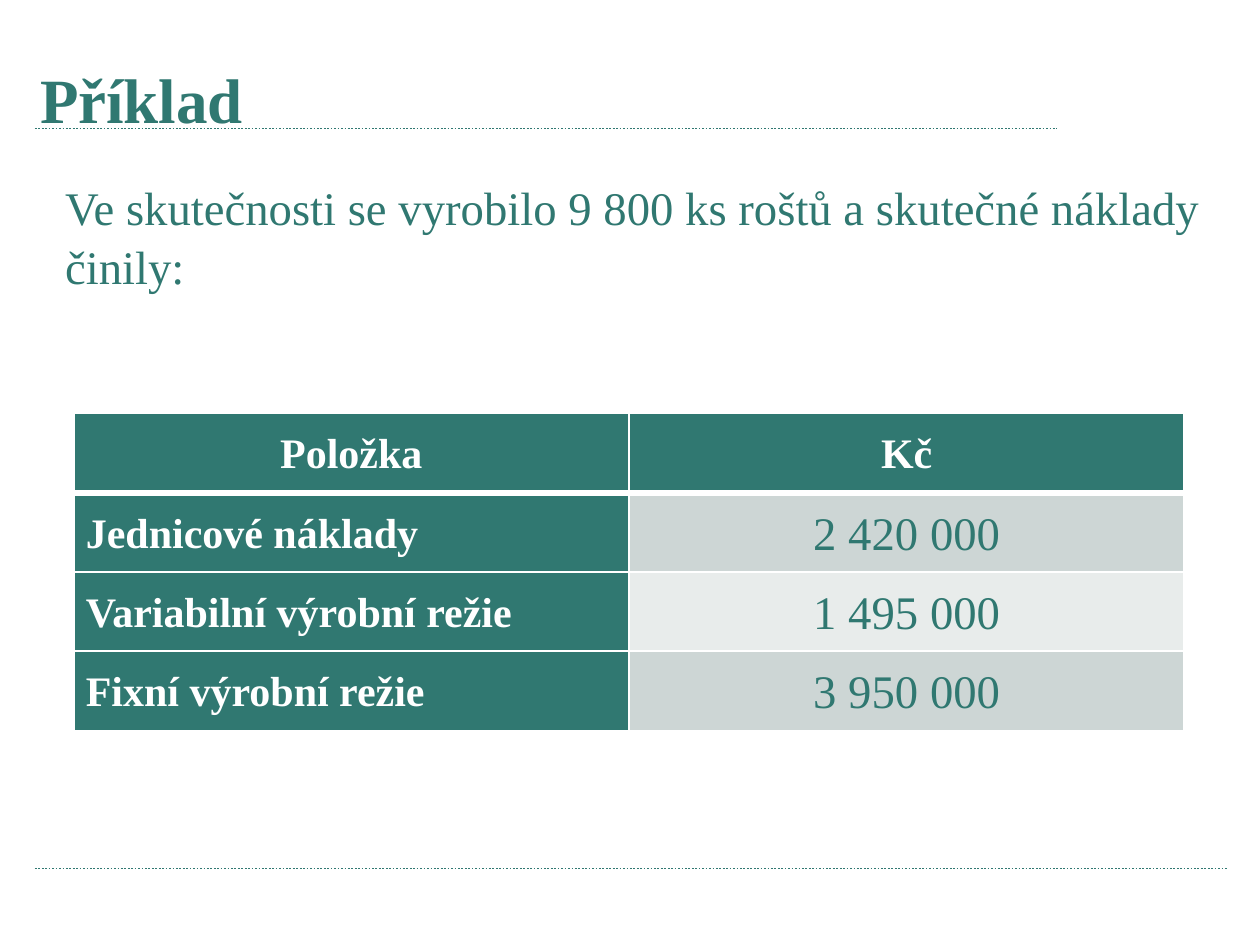
from lxml import etree
from pptx import Presentation
from pptx.dml.color import RGBColor
from pptx.enum.dml import MSO_LINE
from pptx.enum.shapes import MSO_CONNECTOR
from pptx.enum.text import MSO_ANCHOR, MSO_AUTO_SIZE, PP_ALIGN
from pptx.oxml.ns import qn
from pptx.util import Pt

STRAIGHT = MSO_CONNECTOR.STRAIGHT
DOTTED = MSO_LINE.ROUND_DOT
TOP, MIDDLE = MSO_ANCHOR.TOP, MSO_ANCHOR.MIDDLE
LEFT, CENTER = PP_ALIGN.LEFT, PP_ALIGN.CENTER
NO_AUTOFIT = MSO_AUTO_SIZE.NONE

TEAL = RGBColor(0x30, 0x78, 0x71)
WHITE = RGBColor(0xFF, 0xFF, 0xFF)
BAND_DARK = RGBColor(0xCD, 0xD6, 0xD5)
BAND_LIGHT = RGBColor(0xE8, 0xEC, 0xEB)
FONT = "Times New Roman"

COSTS = [
    ("Položka", "Kč"),
    ("Jednicové náklady", "2 420 000"),
    ("Variabilní výrobní režie", "1 495 000"),
    ("Fixní výrobní režie", "3 950 000"),
]


class CostPage:
    def __init__(self, deck):
        self.page = deck.slides.add_slide(deck.slide_layouts[1])

    def style(self, para, size, color=TEAL, bold=False, align=LEFT):
        para.alignment = align
        para.space_before = Pt(0)
        font = para.font
        font.name, font.size, font.bold = FONT, Pt(size), bold
        font.color.rgb = color

    def placeholder(self, index, text, bounds, size, anchor, bold=False, spacing=1.0):
        """Fill and move a template placeholder; its text has no bullet."""
        box = self.page.placeholders[index]
        box.left, box.top, box.width, box.height = map(Pt, bounds)
        frame = box.text_frame
        frame.text = text
        frame.word_wrap = True
        frame.auto_size = NO_AUTOFIT
        frame.vertical_anchor = anchor
        para = frame.paragraphs[0]
        properties = para._p.get_or_add_pPr()
        properties.set("marL", "0")
        properties.set("indent", "0")
        etree.SubElement(properties, qn("a:buNone"))
        self.style(para, size, bold=bold)
        para.line_spacing = spacing

    def rule(self, left, right, y):
        line = self.page.shapes.add_connector(STRAIGHT, Pt(left), Pt(y), Pt(right), Pt(y))
        line.line.color.rgb = TEAL
        line.line.width = Pt(0.75)
        line.line.dash_style = DOTTED
        etree.SubElement(line._element.spPr, qn("a:effectLst"))

    def border(self, cell, widths):
        """Draw white cell borders; widths are left, right, top, bottom."""
        properties = cell._tc.get_or_add_tcPr()
        for position, (side, width) in enumerate(zip("LRTB", widths)):
            edge = etree.Element(qn(f"a:ln{side}"), w=str(Pt(width)))
            fill = etree.SubElement(edge, qn("a:solidFill"))
            etree.SubElement(fill, qn("a:srgbClr"), val=str(WHITE))
            properties.insert(position, edge)

    def table(self, rows, bounds):
        """Table with a teal header row and first column, and banded values."""
        frame = self.page.shapes.add_table(len(rows), len(rows[0]), *map(Pt, bounds))
        for r, values in enumerate(rows):
            for c, value in enumerate(values):
                cell = frame.table.cell(r, c)
                heading = r == 0 or c == 0
                cell.text = value
                cell.vertical_anchor = MIDDLE
                cell.margin_left = cell.margin_right = Pt(5.2)
                cell.margin_top = cell.margin_bottom = Pt(0)
                cell.fill.solid()
                band = BAND_DARK if r % 2 else BAND_LIGHT
                cell.fill.fore_color.rgb = TEAL if heading else band
                para = cell.text_frame.paragraphs[0]
                self.style(para, 18 if heading else 20, WHITE if heading else TEAL,
                           heading, CENTER if r == 0 or c else LEFT)
                para.line_spacing = 1.07
                self.border(cell, (1, 1, 3 if r == 1 else 1, 3 if r == 0 else 1))


def main():
    deck = Presentation()
    deck.slide_width, deck.slide_height = Pt(540), Pt(405)
    page = CostPage(deck)
    page.rule(15, 453, 55.1)
    page.rule(15, 526, 372.3)
    page.placeholder(0, "Příklad", (10, 21, 476, 42.5), 27, MIDDLE, bold=True)
    page.placeholder(1, "Ve skutečnosti se vyrobilo 9 800 ks roštů a skutečné náklady činily:",
                     (20.7, 72, 510.5, 104.4), 20, TOP, spacing=1.05)
    page.table(COSTS, (31.6, 177.2, 476, 136))
    deck.save("out.pptx")


if __name__ == "__main__":
    main()
